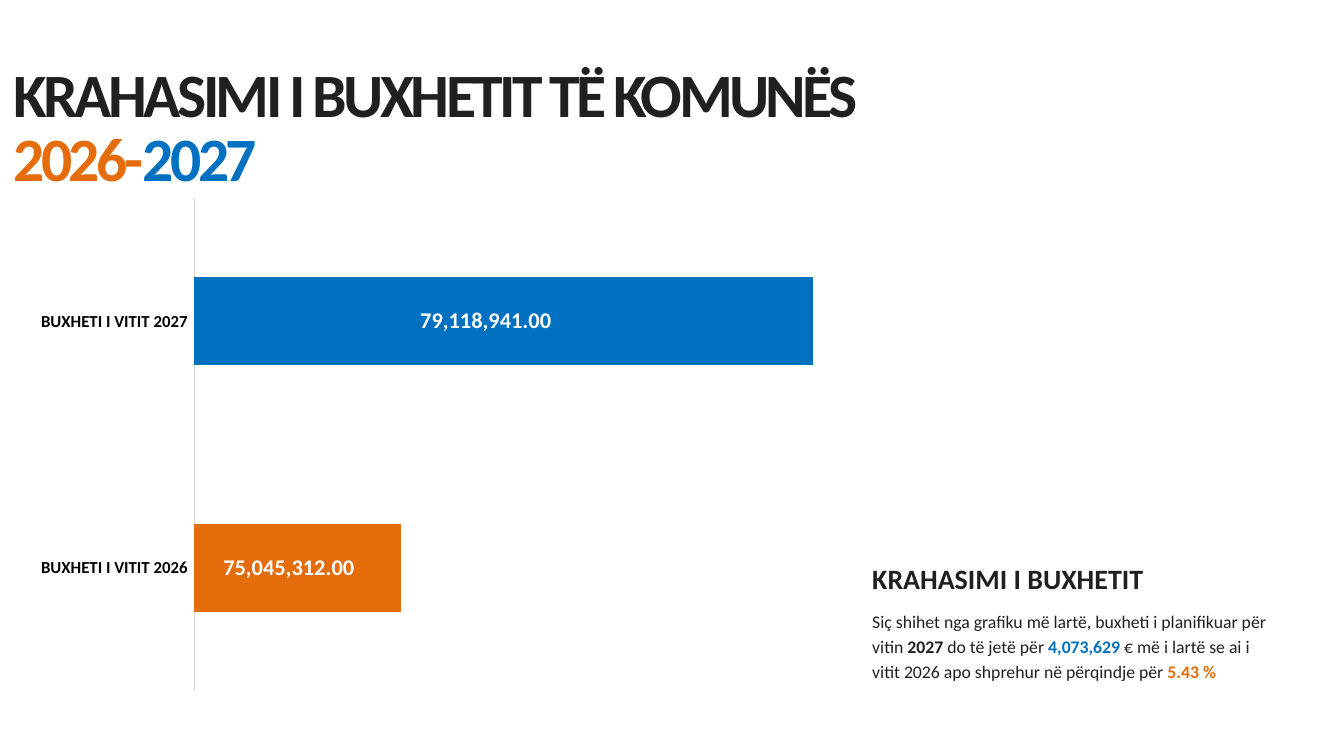
from dataclasses import dataclass

from lxml import etree
from pptx import Presentation
from pptx.chart.data import CategoryChartData
from pptx.dml.color import RGBColor
from pptx.enum.chart import XL_CHART_TYPE as ChartType
from pptx.enum.chart import XL_LABEL_POSITION as LabelPosition
from pptx.enum.chart import XL_TICK_LABEL_POSITION as TickLabels
from pptx.enum.chart import XL_TICK_MARK as TickMark
from pptx.oxml import parse_xml
from pptx.oxml.ns import nsdecls, qn
from pptx.util import Inches, Pt

FONT = "Calibri"
DARK, BLUE, ORANGE = "202020", "0070C0", "E46C0A"
BLACK, WHITE, GREY = "000000", "FFFFFF", "D9D9D9"
AMOUNT_FORMAT = "#,##0.00"


@dataclass
class Span:
    text: str
    color: str = DARK
    bold: bool = True


@dataclass
class TextBlock:
    left: float
    top: float
    width: float
    height: float
    spans: list[Span]
    size: float
    line_spacing: float
    tracking: float = 0


@dataclass
class Budget:
    label: str
    amount: int
    color: str
    label_shift: float  # share of the chart width


def rgb(color: str) -> RGBColor:
    return RGBColor.from_string(color)


def format_font(font, *, size: float, color: str, bold: bool = False) -> None:
    font.name = FONT
    font.size = Pt(size)
    font.bold = bold
    font.color.rgb = rgb(color)


def add_text(page, block: TextBlock) -> None:
    box = page.shapes.add_textbox(Inches(block.left), Inches(block.top),
                                  Inches(block.width), Inches(block.height))
    frame = box.text_frame
    frame.word_wrap = True
    frame.margin_left = frame.margin_right = 0
    frame.margin_top = frame.margin_bottom = 0
    para = frame.paragraphs[0]
    para.line_spacing = Pt(block.line_spacing)
    for span in block.spans:
        run = para.add_run()
        run.text = span.text
        format_font(run.font, size=block.size, color=span.color, bold=span.bold)
        if block.tracking:
            run.font._element.set("spc", str(round(block.tracking * 100)))


def manual_layout(x: float, y: float, *, inner_size: tuple = ()):
    """Chart layout: an offset, or an inner plot area when a size is given."""
    layout = parse_xml(f"<c:layout {nsdecls('c')}><c:manualLayout/></c:layout>")
    values = {"x": x, "y": y}
    if inner_size:
        values = {"layoutTarget": "inner", "xMode": "edge", "yMode": "edge",
                  **values, "w": inner_size[0], "h": inner_size[1]}
    for name, value in values.items():
        etree.SubElement(layout[0], qn(f"c:{name}")).set("val", str(value))
    return layout


def add_budget_chart(page, budgets: list[Budget]) -> None:
    data = CategoryChartData(number_format=AMOUNT_FORMAT)
    data.categories = [budget.label for budget in budgets]
    data.add_series("Series 1", [budget.amount for budget in budgets])
    chart = page.shapes.add_chart(ChartType.BAR_CLUSTERED, Inches(0.36), Inches(2.79),
                                  Inches(13.33), Inches(7.65), data).chart
    chart.has_legend = False
    chart.has_title = False
    format_font(chart.font, size=10, color=BLACK)

    # Axes
    names = chart.category_axis
    names.reverse_order = True
    names.major_tick_mark = names.minor_tick_mark = TickMark.NONE
    names.tick_label_position = TickLabels.LOW
    format_font(names.tick_labels.font, size=18, color=BLACK, bold=True)
    names.format.line.color.rgb = rgb(GREY)
    names.format.line.width = Pt(0.75)
    amounts = chart.value_axis
    amounts.visible = False
    amounts.has_major_gridlines = False
    amounts.minimum_scale, amounts.maximum_scale = 73_000_000, 80_000_000
    amounts.tick_labels.number_format = AMOUNT_FORMAT
    amounts.tick_labels.number_format_is_linked = False

    # Plot area
    plot_area = chart._chartSpace.chart.plotArea
    for old_layout in plot_area.findall(qn("c:layout")):
        plot_area.remove(old_layout)
    plot_area.insert(0, manual_layout(0.19, 0.02, inner_size=(0.79, 0.96)))

    # Bars and their labels
    plot = chart.plots[0]
    plot.gap_width = 182
    plot.vary_by_categories = False
    series = plot.series[0]
    series.format.fill.solid()
    series.format.fill.fore_color.rgb = rgb(WHITE)
    labels = series.data_labels
    labels.show_value = True
    labels.number_format = AMOUNT_FORMAT
    labels.number_format_is_linked = False
    format_font(labels.font, size=18, color=BLACK)
    for index, budget in enumerate(budgets):
        point = series.points[index]
        point.format.fill.solid()
        point.format.fill.fore_color.rgb = rgb(budget.color)
        label = point.data_label
        format_font(label.font, size=24, color=WHITE, bold=True)
        label.position = LabelPosition.CENTER
        element = labels._element.findall(qn("c:dLbl"))[index]
        element.insert(1, manual_layout(budget.label_shift, 0))


TEXTS = [
    # Side note
    TextBlock(12.98, 8.28, 5.9, 0.54, [Span("KRAHASIMI I BUXHETIT")], 30, 42),
    TextBlock(12.98, 9.04, 5.9, 1.48, [
        Span("Siç shihet nga grafiku më lartë, buxheti i planifikuar për vitin ", bold=False),
        Span("2027"),
        Span(" do të jetë për ", bold=False),
        Span("4,073,629", BLUE),
        Span(" € më i lartë se ai i vitit 2026 apo shprehur në përqindje për ", bold=False),
        Span("5.43 %", ORANGE),
    ], 19, 26.6),
    # Title
    TextBlock(0.2, 0.87, 14.78, 1.12, [Span("KRAHASIMI I BUXHETIT TË KOMUNËS")],
              66, 76.9, -3.8),
    TextBlock(0.2, 1.81, 4.72, 1.12, [Span("2026-", ORANGE), Span("2027", BLUE)],
              66, 76.9, -3.8),
]

BUDGETS = [
    Budget("BUXHETI I VITIT 2027", 79118941, BLUE, -0.02),
    Budget("BUXHETI I VITIT 2026", 75045312, ORANGE, -0.01),
]


def main() -> None:
    deck = Presentation()
    deck.slide_width, deck.slide_height = Inches(20), Inches(11.25)
    page = deck.slides.add_slide(deck.slide_layouts[6])
    page.background.fill.solid()
    page.background.fill.fore_color.rgb = rgb(WHITE)
    for block in TEXTS:
        add_text(page, block)
    add_budget_chart(page, BUDGETS)
    deck.save("out.pptx")


if __name__ == "__main__":
    main()
